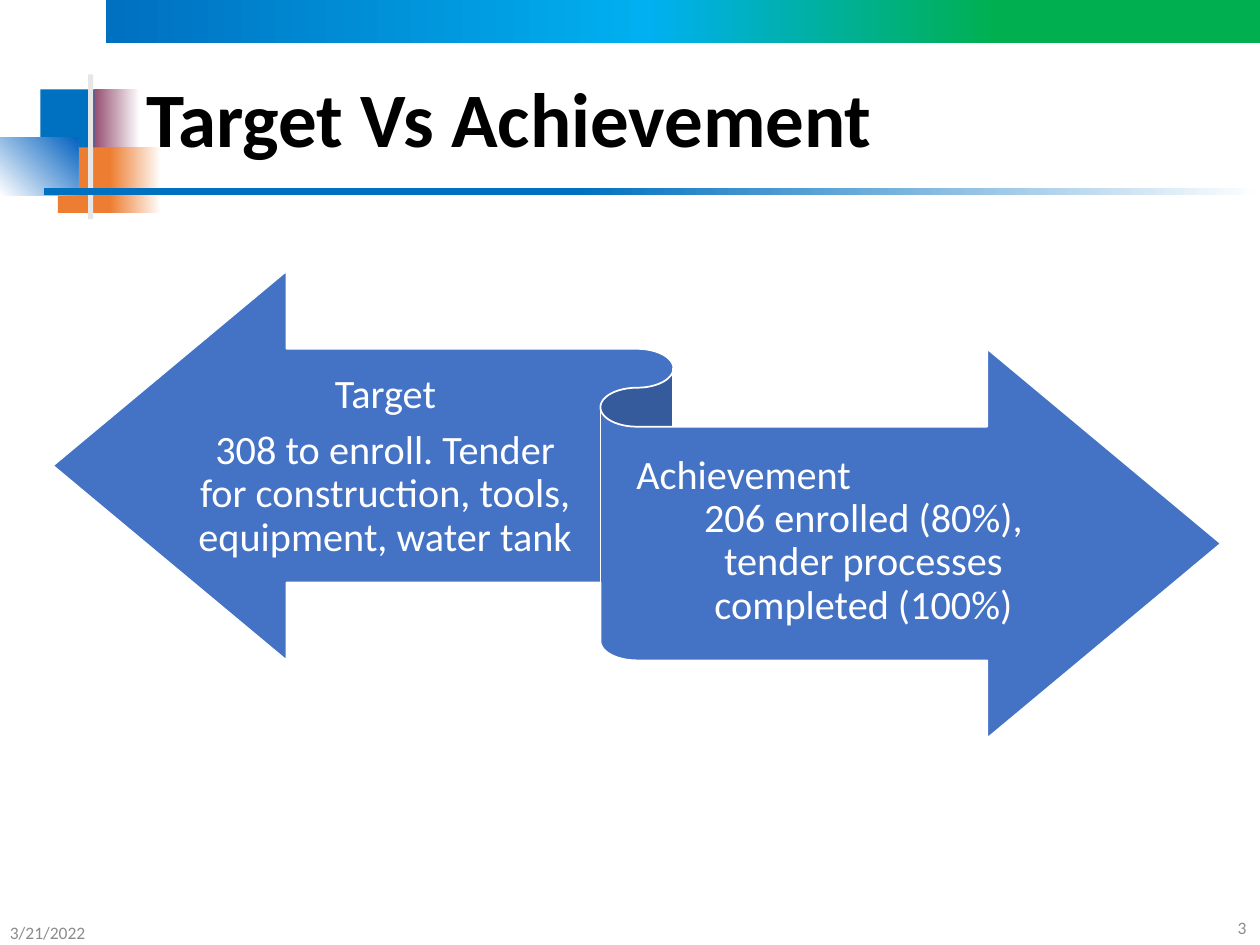
import pptx
import pptx.dml.color
import pptx.enum.shapes
import pptx.enum.text
import pptx.oxml
import pptx.oxml.ns
import pptx.util
from pptx.util import Inches

ALIGN = pptx.enum.text.PP_ALIGN
SHAPE = pptx.enum.shapes.MSO_SHAPE


def color(hex_string):
    return pptx.dml.color.RGBColor.from_string(hex_string)


def write(frame, paragraphs, size, fill, bold=False, align=ALIGN.LEFT,
          spacing=1.0, after=0, insets=(0.1, 0.05, 0.1, 0.05)):
    """Fill a text frame; a paragraph is a text or a (text, alignment) pair."""
    frame.word_wrap = True
    frame.auto_size = pptx.enum.text.MSO_AUTO_SIZE.NONE
    frame.vertical_anchor = pptx.enum.text.MSO_ANCHOR.MIDDLE
    (frame.margin_left, frame.margin_top,
     frame.margin_right, frame.margin_bottom) = map(Inches, insets)
    for index, item in enumerate(paragraphs):
        text, alignment = item if isinstance(item, tuple) else (item, align)
        paragraph = frame.add_paragraph() if index else frame.paragraphs[0]
        paragraph.text = text
        paragraph.alignment = alignment
        paragraph.line_spacing = spacing
        paragraph.space_before = pptx.util.Pt(0)
        paragraph.space_after = pptx.util.Pt(after)
        for run in paragraph.runs:
            run.font.name = "Calibri"
            run.font.size = pptx.util.Pt(size)
            run.font.bold = bold
            run.font.color.rgb = color(fill)


class SlideBuilder:
    """Holds the theme colours and the slide being built."""
    blue, orange, white = "0070C0", "ED7D31", "FFFFFF"
    ribbon_blue, grey = "4472C4", "8C8C8C"

    def __init__(self, slide):
        self.slide = slide

    def title(self, box, text):
        title = self.slide.shapes.title
        title.left, title.top, title.width, title.height = map(Inches, box)
        write(title.text_frame, [text], 44, "000000", bold=True, spacing=0.9)

    def shape(self, kind, box, fill, line=None):
        shape = self.slide.shapes.add_shape(kind, *map(Inches, box))
        shape.shadow.inherit = False
        shape.fill.solid()
        shape.fill.fore_color.rgb = color(fill)
        if line:
            shape.line.color.rgb = color(line)
            shape.line.width = pptx.util.Pt(1)
        else:
            shape.line.fill.background()
        return shape

    def gradient(self, box, stops, angle=0):
        """Rectangle with (percent, colour) stops; angle runs clockwise."""
        properties = self.shape(SHAPE.RECTANGLE, box, self.white)._element.spPr
        stop_xml = "".join(
            f'<a:gs pos="{percent * 1000}"><a:srgbClr val="{value}"/></a:gs>'
            for percent, value in stops)
        gradient = pptx.oxml.parse_xml(
            f'<a:gradFill {pptx.oxml.ns.nsdecls("a")} rotWithShape="1">'
            f'<a:gsLst>{stop_xml}</a:gsLst>'
            f'<a:lin ang="{angle * 60000}" scaled="0"/></a:gradFill>')
        solid = properties.find(pptx.oxml.ns.qn("a:solidFill"))
        properties.replace(solid, gradient)

    def text(self, box, paragraphs, size, fill, **style):
        frame = self.slide.shapes.add_textbox(*map(Inches, box)).text_frame
        write(frame, paragraphs, size, fill, **style)

    def ribbon_label(self, box, paragraphs, after=0):
        self.text(box, paragraphs, 23, self.white, align=ALIGN.CENTER,
                  spacing=0.9, after=after, insets=(0, 0.09, 0, 0.1))


def add_banner(builder):
    blue, orange, white = builder.blue, builder.orange, builder.white
    builder.gradient((0.84, -0.01, 9.16, 0.35),
                     [(0, blue), (47, "00B0F0"), (77, "00B050")])
    builder.shape(SHAPE.RECTANGLE, (0.32, 0.71, 0.48, 0.52), blue)
    builder.gradient((0.75, 0.71, 0.36, 0.52), [(0, "954F72"), (100, white)])
    builder.shape(SHAPE.RECTANGLE, (0.46, 1.17, 0.47, 0.52), orange)
    builder.gradient((0.87, 1.17, 0.41, 0.52), [(0, orange), (100, white)])
    builder.gradient((0, 1.09, 0.62, 0.46),
                     [(0, white), (100, "0563C1")], angle=315)
    builder.shape(SHAPE.RECTANGLE, (0.7, 0.59, 0.04, 1.15), "E7E6E6")
    builder.gradient((0.35, 1.49, 9.65, 0.06), [(44, blue), (100, white)])


def add_ribbon(builder):
    builder.shape(SHAPE.LEFT_RIGHT_RIBBON, (0.42, 2.15, 9.27, 3.71),
                  builder.ribbon_blue, line=builder.white)
    builder.ribbon_label((1.53, 2.8, 3.06, 1.82), [
        "Target",
        "308 to enroll. Tender for construction, tools, equipment, water tank",
    ], after=7)
    builder.ribbon_label((5.05, 3.39, 3.61, 1.82), [
        ("Achievement", ALIGN.LEFT),
        "206 enrolled (80%),\vtender processes\vcompleted (100%)",
    ])


def main():
    deck = pptx.Presentation()
    deck.slide_width, deck.slide_height = Inches(10), Inches(7.5)
    title_only = deck.slide_layouts.get_by_name("Title Only")
    builder = SlideBuilder(deck.slides.add_slide(title_only))
    add_banner(builder)
    builder.title((1.06, 0.25, 8.62, 1.45), "Target Vs Achievement")
    add_ribbon(builder)
    builder.text((-0.02, 7.2, 2.25, 0.4), ["3/21/2022"], 10, builder.grey)
    builder.text((7.74, 7.16, 2.25, 0.4), ["3"], 10, builder.grey,
                 align=ALIGN.RIGHT)
    deck.save("out.pptx")


if __name__ == "__main__":
    main()
